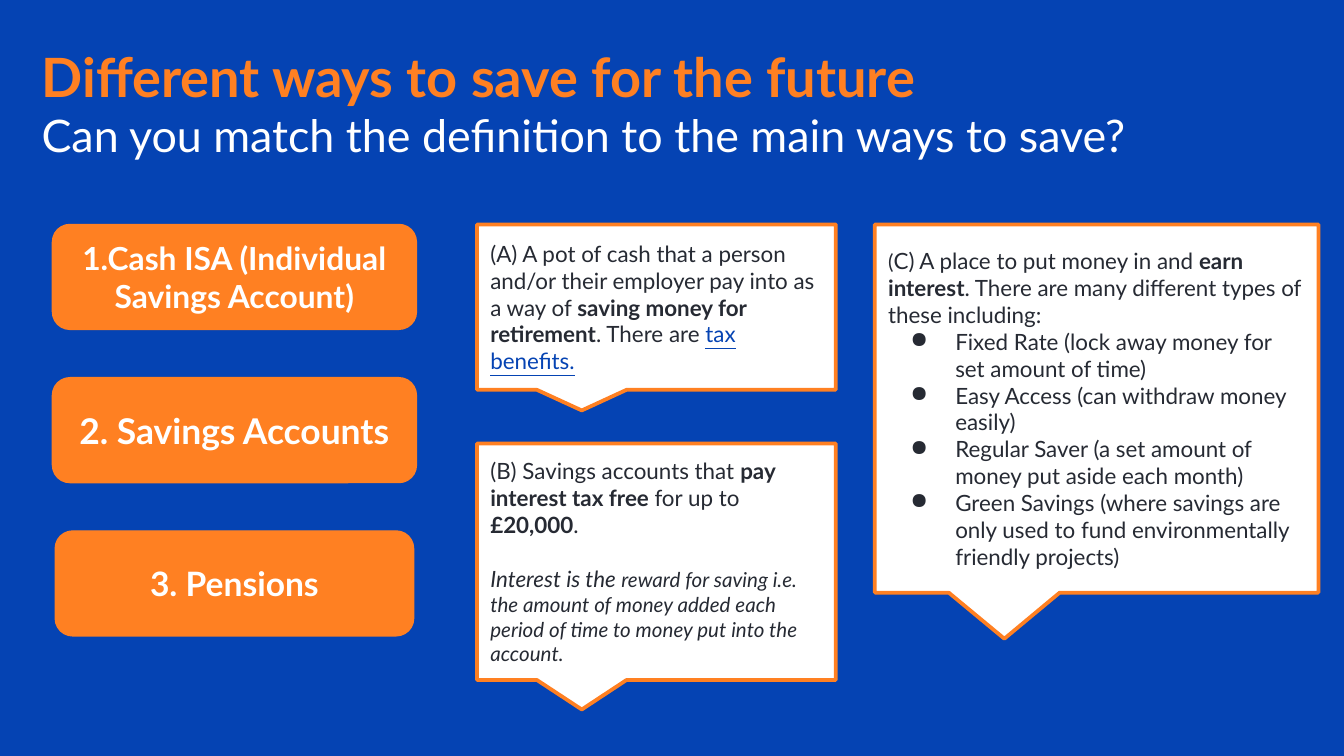
"""Build the slide that matches ways of saving to their definitions."""
from lxml.etree import SubElement
from pptx import Presentation
from pptx.dml.color import RGBColor
from pptx.enum.shapes import MSO_SHAPE as Shape
from pptx.enum.text import MSO_ANCHOR as Anchor, PP_ALIGN as Align
from pptx.oxml.ns import qn
from pptx.util import Pt

BLUE = RGBColor(0x05, 0x43, 0xB3)
ORANGE = RGBColor(0xFF, 0x80, 0x22)
WHITE = RGBColor(0xFF, 0xFF, 0xFF)
INK = RGBColor(0x26, 0x2A, 0x33)
FONT = "Lato"

B = {"bold": True}
I = {"italic": True}

TITLE = "Different ways to save for the future"
QUESTION = "Can you match the definition to the main ways to save?"

WAYS = [
    ("1.Cash ISA (Individual Savings Account)", 17, 195),
    ("2. Savings Accounts", 19, 195),
    ("3. Pensions", 18, 192),
]

PENSION = [
    ("(A) A pot of cash that a person and/or their employer pay into as a way of ", {}),
    ("saving money for retirement", B),
    (". There are ", {}),
    ("tax benefits.", {"color": BLUE, "underline": True}),
]
ISA = [
    ("(B) Savings accounts that ", {}),
    ("pay interest tax free ", B),
    ("for up to ", {}),
    ("£20,000", B),
    (".", {}),
]
INTEREST = [
    ("Interest is the ", I),
    ("reward for saving i.e. the amount of money added each period of time "
     "to money put into the account.", {"italic": True, "size": 11}),
]
SAVINGS = [
    ("(", {"size": 11}),
    ("C) A place to put money in and", {}),
    (" earn interest", B),
    (". There are many different types of these including:", {}),
]
TYPES = [
    "Fixed Rate (lock away money for set amount of time)",
    "Easy Access (can withdraw money easily)",
    "Regular Saver (a set amount of money put aside each month)",
    "Green Savings (where savings are only used to fund environmentally friendly projects)",
]

TOP = 120.25
CARD_CENTER, CARD_H, CARD_STEP = 125.6, 56.2, 82.1
MIDDLE_X, MIDDLE_W = 255.6, 192.2
CALLOUTS = [
    ((468.7, TOP, 237.6, 197.3), [SAVINGS], TYPES),
    ((MIDDLE_X, 237.6, MIDDLE_W, 126.7), [ISA, INTEREST], []),
    ((MIDDLE_X, TOP, MIDDLE_W, 88.6), [PENSION], []),
]


def add_run(p, text, size=12, color=INK, bold=False, italic=False, underline=False):
    r = p.add_run()
    r.text = text
    f = r.font
    f.name, f.size, f.color.rgb = FONT, Pt(size), color
    f.bold, f.italic, f.underline = bold, italic, underline


def next_paragraph(tf):
    return tf.add_paragraph() if tf.paragraphs[0].runs else tf.paragraphs[0]


def setup_frame(tf, side, ends, anchor):
    tf.word_wrap = True
    tf.vertical_anchor = anchor
    tf.margin_left = tf.margin_right = Pt(side)
    tf.margin_top = tf.margin_bottom = Pt(ends)
    return tf


def add_box(s, kind, box, fill, line_width, adjustments, ends):
    sp = s.shapes.add_shape(kind, *map(Pt, box))
    sp.shadow.inherit = False
    sp.fill.solid()
    sp.fill.fore_color.rgb = fill
    sp.line.color.rgb = ORANGE
    sp.line.width = Pt(line_width)
    for i, value in enumerate(adjustments):
        sp.adjustments[i] = value
    return setup_frame(sp.text_frame, 7.2, ends, Anchor.MIDDLE)


def set_bullet(p):
    pPr = p._p.get_or_add_pPr()
    pPr.set("marL", str(Pt(36)))
    pPr.set("indent", str(Pt(-24)))
    color = SubElement(pPr, qn("a:buClr"))
    SubElement(color, qn("a:srgbClr"), val=str(INK))
    SubElement(pPr, qn("a:buChar"), char="●")


def main():
    prs = Presentation()
    prs.slide_width, prs.slide_height = Pt(720), Pt(405)
    s = prs.slides.add_slide(prs.slide_layouts[6])
    s.background.fill.solid()
    s.background.fill.fore_color.rgb = BLUE

    sp = s.shapes.add_textbox(Pt(22.3), Pt(23), Pt(612), Pt(61.2))
    tf = setup_frame(sp.text_frame, 0, 0, Anchor.TOP)
    add_run(next_paragraph(tf), TITLE, size=29, color=ORANGE, bold=True)
    add_run(next_paragraph(tf), QUESTION, size=24, color=WHITE)

    for box, paragraphs, bullets in CALLOUTS:
        tf = add_box(s, Shape.ROUNDED_RECTANGULAR_CALLOUT, box, WHITE, 2,
                     (-0.208, 0.625, 0), 3.6)
        for i, runs in enumerate(paragraphs):
            p = next_paragraph(tf)
            p.alignment = Align.LEFT
            if i:
                p.space_before = Pt(14.4)
            for text, style in runs:
                add_run(p, text, **style)
        for text in bullets:
            p = next_paragraph(tf)
            p.alignment = Align.LEFT
            set_bullet(p)
            add_run(p, text)

    for i, (text, size, width) in enumerate(WAYS):
        box = (CARD_CENTER - width / 2, TOP + i * CARD_STEP, width, CARD_H)
        tf = add_box(s, Shape.ROUNDED_RECTANGLE, box, ORANGE, 0.75, (0.167,), 7.2)
        p = next_paragraph(tf)
        p.alignment = Align.CENTER
        add_run(p, text, size=size, color=WHITE, bold=True)

    prs.save("out.pptx")


if __name__ == "__main__":
    main()
